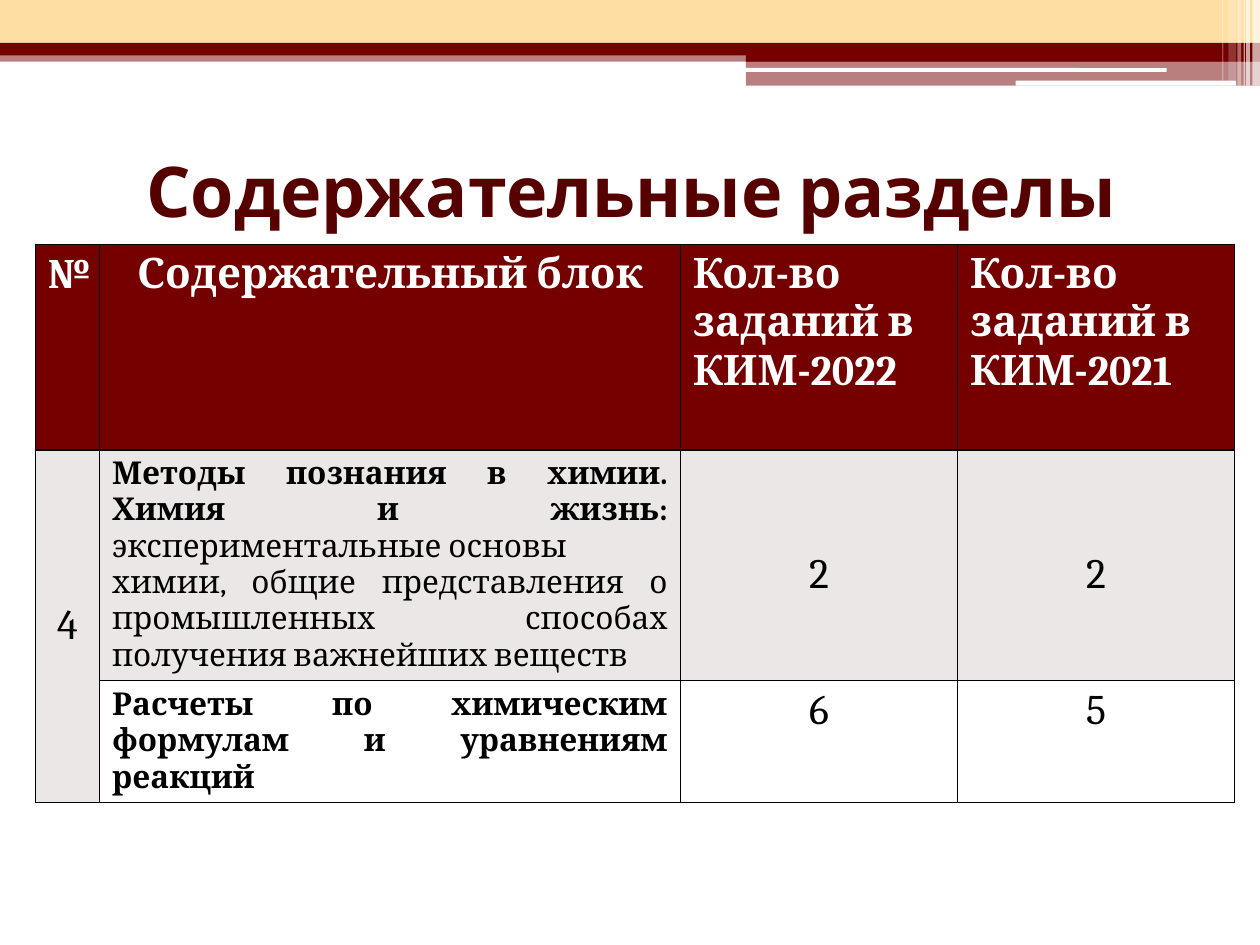
"""Build the slide on content sections of the chemistry exam."""
from typing import NamedTuple

from pptx import Presentation as Deck
from pptx.dml.color import RGBColor
from pptx.enum.shapes import MSO_SHAPE as Form
from pptx.enum.text import MSO_ANCHOR as Anchor, PP_ALIGN as Align
from pptx.oxml import parse_xml
from pptx.oxml.ns import nsdecls, qn
from pptx.util import Inches, Pt

DARK, SAND, WHITE, BLACK, GREY = "740000", "FFDEA4", "FFFFFF", "000000", "EBE7E7"
WIDTHS = 0.51, 4.61, 2.2, 2.2
HEIGHTS = 1.63, 1.83, 0.96


class Bar(NamedTuple):
    left: float
    top: float
    width: float
    height: float
    color: str
    alpha: int = 100
    form: Form = Form.RECTANGLE


class Run(NamedTuple):
    text: str
    size: int = 24
    bold: bool = False
    color: str = BLACK
    font: str = "Cambria"


class Cell(NamedTuple):
    row: int
    col: int
    paras: list[list[Run]]
    fill: str
    align: Align = Align.CENTER
    anchor: Anchor = Anchor.TOP
    top: float = 0.05


BARS = [
    Bar(0, 0.4, 10, 0.09, DARK, 50),
    Bar(0, 0, 10, 0.34, SAND),
    Bar(0, 0.34, 10, 0.1, DARK),
    Bar(5.92, 0.39, 4.08, 0.1, DARK),
    Bar(5.92, 0.48, 4.08, 0.2, DARK, 50),
    Bar(5.91, 0.54, 3.35, 0.03, WHITE, form=Form.ROUNDED_RECTANGLE),
    Bar(8.06, 0.64, 1.75, 0.04, WHITE, form=Form.ROUNDED_RECTANGLE),
    Bar(9.94, 0, 0.06, 0.68, WHITE, 65),
    Bar(9.89, 0, 0.03, 0.68, WHITE, 65),
    Bar(9.87, 0, 0.01, 0.68, WHITE, 60),
    Bar(9.82, 0, 0.03, 0.68, WHITE, 40),
    Bar(9.75, 0, 0.06, 0.64, WHITE, 20),
    Bar(9.7, 0, 0.01, 0.64, WHITE, 30),
]


def head(col: int, *lines: str, align: Align = Align.LEFT) -> Cell:
    return Cell(0, col, [[Run(line, 24, True, WHITE)] for line in lines], DARK, align)


def count(row: int, col: int, text: str, fill: str, **place) -> Cell:
    return Cell(row, col, [[Run(text)]], fill, **place)


CELLS = [
    head(0, "№", align=Align.CENTER),
    head(1, "Содержательный блок", align=Align.CENTER),
    head(2, "Кол-во", "заданий в КИМ-2022"),
    head(3, "Кол-во", "заданий в КИМ-2021"),
    count(1, 0, "4", GREY, anchor=Anchor.MIDDLE),
    Cell(1, 1, [
        [Run("Методы познания в химии. Химия и жизнь: ", 18, True),
         Run("экспериментальные основы", 18)],
        [Run("химии, общие представления о промышленных способах "
             "получения важнейших веществ", 18)],
    ], GREY, Align.JUSTIFY),
    count(1, 2, "2", GREY, anchor=Anchor.MIDDLE, top=0.21),
    count(1, 3, "2", GREY, anchor=Anchor.MIDDLE, top=0.21),
    Cell(2, 1, [[Run("Расчеты по химическим формулам и уравнениям реакций", 18, True)]],
         WHITE, Align.JUSTIFY),
    count(2, 2, "6", WHITE),
    count(2, 3, "5", WHITE),
]


def paint(fill, color: str) -> None:
    fill.solid()
    fill.fore_color.rgb = RGBColor.from_string(color)


def write(frame, paras: list[list[Run]], align: Align) -> None:
    for i, runs in enumerate(paras):
        para = frame.add_paragraph() if i else frame.paragraphs[0]
        para.alignment = align
        for item in runs:
            run = para.add_run()
            run.text = item.text
            font = run.font
            font.name, font.size, font.bold = item.font, Pt(item.size), item.bold
            paint(font.fill, item.color)


def draw_bar(slide, bar: Bar) -> None:
    box = map(Inches, (bar.left, bar.top, bar.width, bar.height))
    shape = slide.shapes.add_shape(bar.form, *box)
    shape.shadow.inherit = False
    paint(shape.fill, bar.color)
    shape.line.fill.background()
    if bar.alpha < 100:
        tint = shape.element.spPr.find(qn("a:solidFill"))[0]
        tint.append(parse_xml(f'<a:alpha {nsdecls("a")} val="{bar.alpha * 1000}"/>'))


def frame_cell(cell) -> None:
    props = cell._tc.get_or_add_tcPr()
    for i, side in enumerate("LRTB"):
        props.insert(i, parse_xml(
            f'<a:ln{side} {nsdecls("a")} w="12700"><a:solidFill>'
            f'<a:srgbClr val="{BLACK}"/></a:solidFill></a:ln{side}>'))


def draw_table(slide) -> None:
    box = map(Inches, (0.28, 1.94, sum(WIDTHS), sum(HEIGHTS)))
    table = slide.shapes.add_table(len(HEIGHTS), len(WIDTHS), *box).table
    for col, width in zip(table.columns, WIDTHS):
        col.width = Inches(width)
    for row, height in zip(table.rows, HEIGHTS):
        row.height = Inches(height)
    table.cell(1, 0).merge(table.cell(2, 0))
    for item in CELLS:
        cell = table.cell(item.row, item.col)
        paint(cell.fill, item.fill)
        cell.vertical_anchor = item.anchor
        cell.margin_top = Inches(item.top)
        write(cell.text_frame, item.paras, item.align)
    for cell in table.iter_cells():
        frame_cell(cell)


def draw_title(slide) -> None:
    title = slide.shapes.title
    title.left, title.top, title.width, title.height = map(Inches, (0.51, 0.92, 9, 1.17))
    title.text_frame.vertical_anchor = Anchor.MIDDLE
    text = Run("Содержательные разделы", 40, True, "570000", "Cabin")
    write(title.text_frame, [[text]], Align.CENTER)


def main() -> None:
    deck = Deck()
    deck.slide_width, deck.slide_height = Inches(10), Inches(7.5)
    slide = deck.slides.add_slide(deck.slide_layouts[5])
    paint(slide.background.fill, WHITE)
    for bar in BARS:
        draw_bar(slide, bar)
    draw_title(slide)
    draw_table(slide)
    deck.save("out.pptx")


if __name__ == "__main__":
    main()
